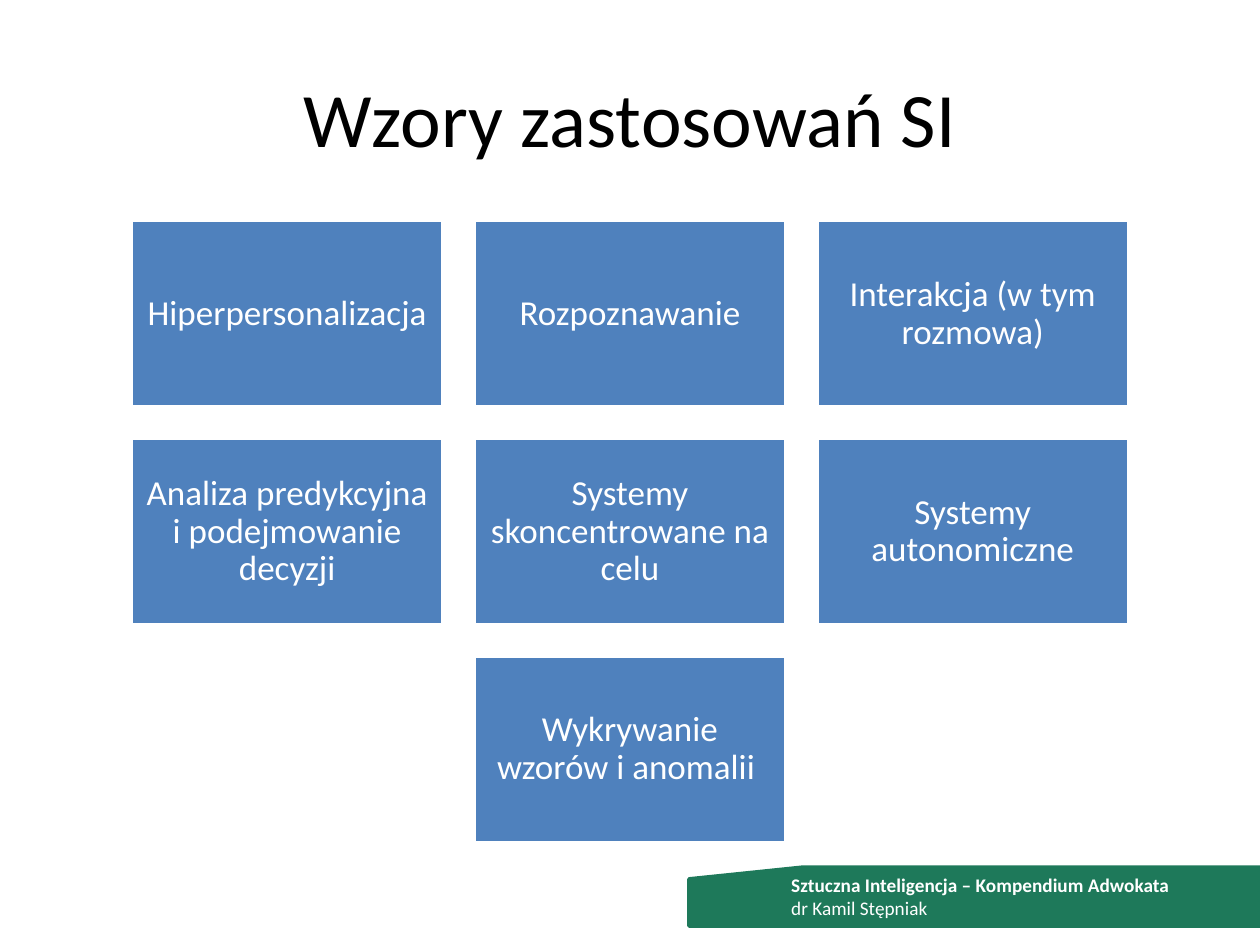
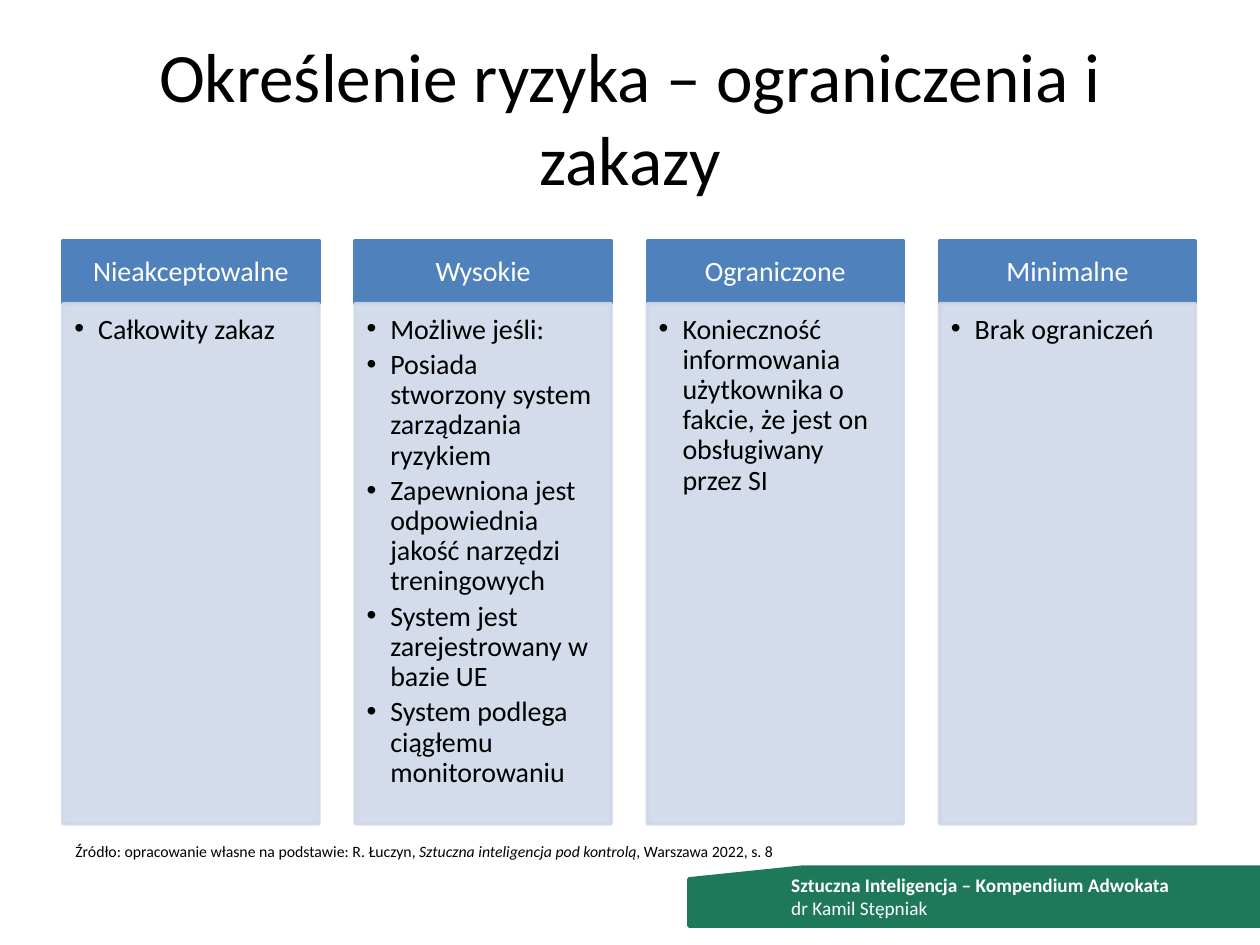
"""Build two slides on AI use patterns and on risk levels with their restrictions."""
from dataclasses import dataclass

from lxml import etree
from pptx import Presentation
from pptx.dml.color import RGBColor
from pptx.enum.shapes import MSO_SHAPE
from pptx.enum.text import MSO_ANCHOR, MSO_AUTO_SIZE, PP_ALIGN
from pptx.oxml.ns import qn
from pptx.util import Cm, Pt

RECTANGLE = MSO_SHAPE.RECTANGLE
PUNCHED_CARD = MSO_SHAPE.FLOWCHART_CARD
CENTER, LEFT = PP_ALIGN.CENTER, PP_ALIGN.LEFT
MIDDLE, TOP = MSO_ANCHOR.MIDDLE, MSO_ANCHOR.TOP
NO_AUTOFIT = MSO_AUTO_SIZE.NONE


@dataclass(frozen=True)
class Theme:
    font: str = "Calibri"
    blue: str = "4F81BD"
    pale: str = "D0D8E8"
    green: str = "1E795A"
    white: str = "FFFFFF"
    black: str = "000000"
    title: float = 44
    long_title: float = 39.6
    tile: float = 20
    column: float = 16
    footer: float = 11
    source: float = 9
    outline: float = 2


THEME = Theme()


def add_run(paragraph, text, size, color, bold=False, italic=False):
    run = paragraph.add_run()
    run.text = text
    run.font.name = THEME.font
    run.font.size = Pt(size)
    run.font.bold = bold
    run.font.italic = italic
    run.font.color.rgb = RGBColor.from_string(color)


def add_panel(slide, preset, place, fill, line, margins=(0, 0, 0, 0), anchor=MIDDLE):
    panel = slide.shapes.add_shape(preset, *[Cm(length) for length in place])
    panel.shadow.inherit = False
    panel.fill.solid()
    panel.fill.fore_color.rgb = RGBColor.from_string(fill)
    panel.line.color.rgb = RGBColor.from_string(line)
    panel.line.width = Pt(THEME.outline)
    frame = panel.text_frame
    frame.word_wrap = True
    frame.vertical_anchor = anchor
    (frame.margin_left, frame.margin_top,
     frame.margin_right, frame.margin_bottom) = [Cm(margin) for margin in margins]
    return panel


deck = Presentation()
SLIDE_WIDTH = 25.4
deck.slide_width, deck.slide_height = Cm(SLIDE_WIDTH), Cm(19.05)
title_only = deck.slide_layouts[5]

slides = []
for heading, size in [
    ("Wzory zastosowań SI", THEME.title),
    ("Określenie ryzyka – ograniczenia i zakazy", THEME.long_title),
]:
    slide = deck.slides.add_slide(title_only)
    slides.append(slide)
    title = slide.shapes.title
    title.left, title.top, title.width, title.height = Cm(1.27), Cm(0.76), Cm(22.86), Cm(3.18)
    title.text_frame.auto_size = NO_AUTOFIT
    title.text_frame.vertical_anchor = MIDDLE
    title_line = title.text_frame.paragraphs[0]
    title_line.alignment = CENTER
    add_run(title_line, heading, size, THEME.black)

    add_panel(slide, PUNCHED_CARD, (13.89, 17.48, 11.51, 1.19), THEME.green, THEME.green)
    footer = slide.shapes.add_textbox(Cm(15.7), Cm(17.48), Cm(9.6), Cm(1.19))
    footer.text_frame.word_wrap = True
    footer_line = footer.text_frame.paragraphs[0]
    add_run(footer_line, "Sztuczna Inteligencja – Kompendium Adwokata",
            THEME.footer, THEME.white, bold=True)
    footer_line.add_line_break()
    add_run(footer_line, "dr Kamil Stępniak", THEME.footer, THEME.white)

patterns_slide, risk_slide = slides

pattern_rows = [
    ["Hiperpersonalizacja", "Rozpoznawanie", "Interakcja (w tym rozmowa)"],
    ["Analiza predykcyjna i podejmowanie decyzji", "Systemy skoncentrowane na celu",
     "Systemy autonomiczne"],
    ["Wykrywanie wzorów i anomalii "],
]
TILE_WIDTH, TILE_HEIGHT, TILE_GAP, TILES_TOP = 6.28, 3.76, 0.63, 4.45
for row, patterns in enumerate(pattern_rows):
    row_width = len(patterns) * (TILE_WIDTH + TILE_GAP) - TILE_GAP
    row_left = (SLIDE_WIDTH - row_width) / 2
    for column, pattern in enumerate(patterns):
        place = (row_left + column * (TILE_WIDTH + TILE_GAP),
                 TILES_TOP + row * (TILE_HEIGHT + TILE_GAP), TILE_WIDTH, TILE_HEIGHT)
        tile = add_panel(patterns_slide, RECTANGLE, place, THEME.blue, THEME.white, (0.2,) * 4)
        tile_line = tile.text_frame.paragraphs[0]
        tile_line.alignment = CENTER
        tile_line.line_spacing = 0.9
        add_run(tile_line, pattern, THEME.tile, THEME.white)

risk_levels = {
    "Nieakceptowalne": ["Całkowity zakaz"],
    "Wysokie": [
        "Możliwe jeśli:",
        "Posiada stworzony system zarządzania ryzykiem",
        "Zapewniona jest odpowiednia jakość narzędzi treningowych",
        "System jest zarejestrowany w bazie UE",
        "System podlega ciągłemu monitorowaniu",
    ],
    "Ograniczone": [
        "Konieczność informowania użytkownika o fakcie, że jest on obsługiwany przez SI",
    ],
    "Minimalne": ["Brak ograniczeń"],
}
LEVEL_WIDTH, LEVEL_PITCH, LEVELS_LEFT, LEVELS_TOP = 5.16, 5.89, 1.27, 4.85
HEAD_HEIGHT, BODY_HEIGHT = 1.27, 10.49
for index, (level, rules) in enumerate(risk_levels.items()):
    left = LEVELS_LEFT + index * LEVEL_PITCH
    head = add_panel(risk_slide, RECTANGLE, (left, LEVELS_TOP, LEVEL_WIDTH, HEAD_HEIGHT),
                     THEME.blue, THEME.blue, (0.3, 0.18, 0.3, 0.18))
    head_line = head.text_frame.paragraphs[0]
    head_line.alignment = CENTER
    head_line.line_spacing = 0.9
    add_run(head_line, level, THEME.column, THEME.white)

    body = add_panel(risk_slide, RECTANGLE,
                     (left, LEVELS_TOP + HEAD_HEIGHT, LEVEL_WIDTH, BODY_HEIGHT),
                     THEME.pale, THEME.pale, (0.23, 0.23, 0.3, 0.36), TOP)
    for color in body.element.spPr.iter(qn("a:srgbClr")):
        etree.SubElement(color, qn("a:alpha"), val="90000")
    for number, rule in enumerate(rules):
        frame = body.text_frame
        rule_line = frame.add_paragraph() if number else frame.paragraphs[0]
        rule_line.alignment = LEFT
        rule_line.line_spacing = 0.9
        rule_line.space_after = Pt(2.9)
        properties = rule_line._p.get_or_add_pPr()
        properties.set("marL", str(Cm(0.48)))
        properties.set("indent", str(-Cm(0.48)))
        etree.SubElement(properties, qn("a:buFont"), typeface="Arial")
        etree.SubElement(properties, qn("a:buChar"), char="•")
        add_run(rule_line, rule, THEME.column, THEME.black)

source = risk_slide.shapes.add_textbox(Cm(1.27), Cm(16.84), Cm(16.03), Cm(0.64))
source.text_frame.word_wrap = True
source_line = source.text_frame.paragraphs[0]
for text, italic in [
    ("Źródło: opracowanie własne na podstawie: R. Łuczyn, ", False),
    ("Sztuczna inteligencja pod kontrolą", True),
    (", Warszawa 2022, s. 8", False),
]:
    add_run(source_line, text, THEME.source, THEME.black, italic=italic)

deck.save("out.pptx")
